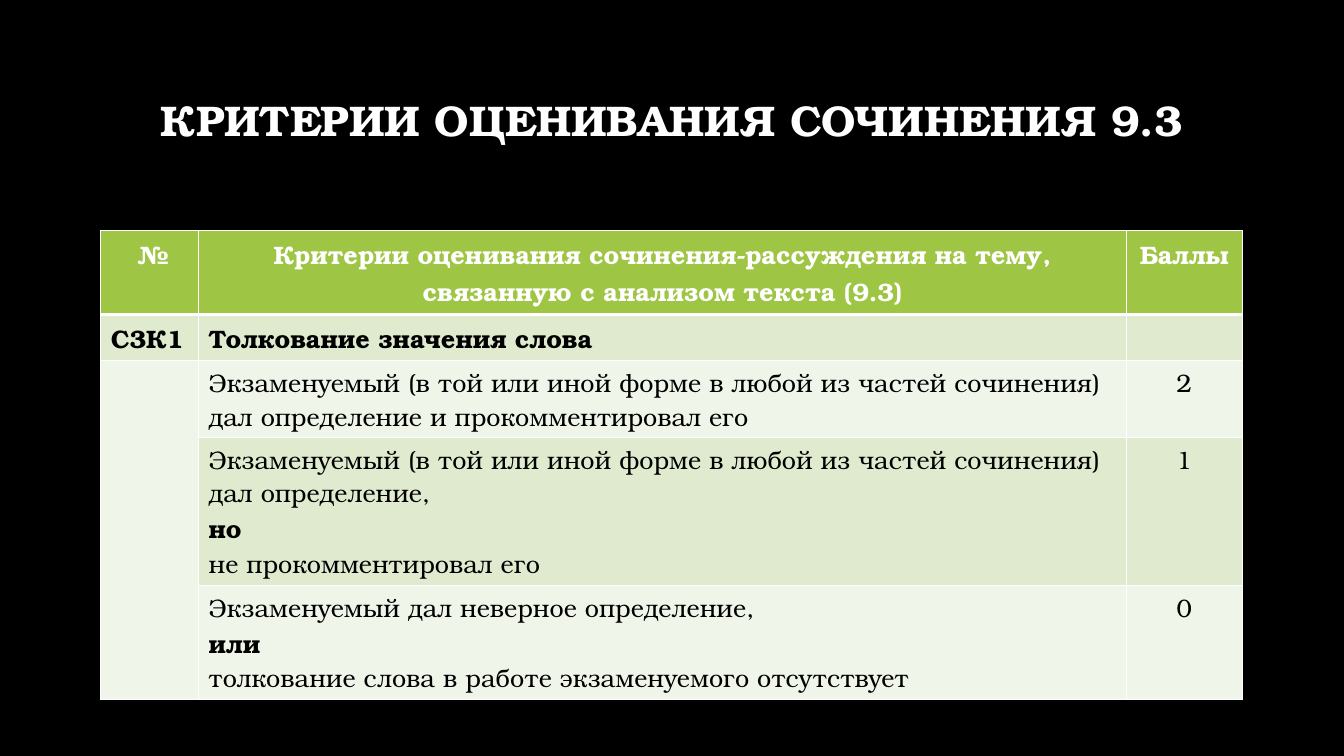
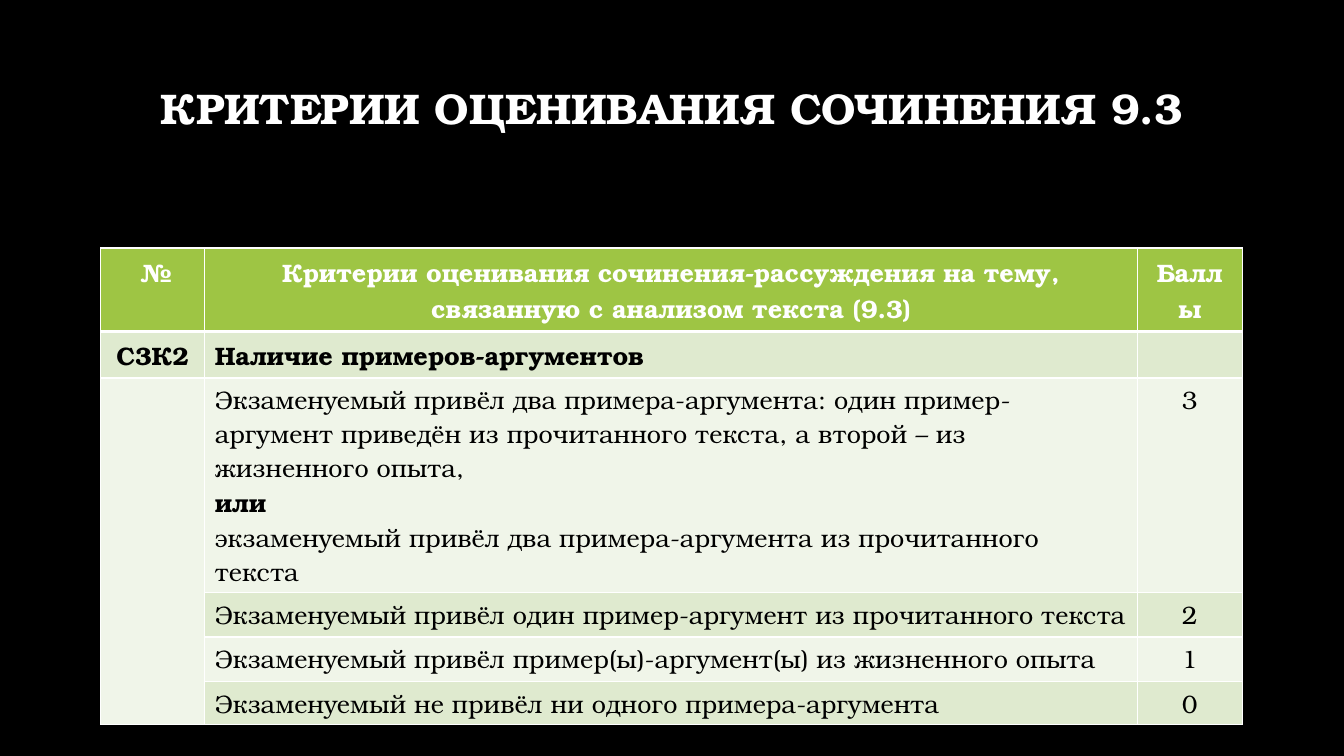
from lxml import etree
from pptx import Presentation
from pptx.dml.color import RGBColor
from pptx.enum.text import MSO_ANCHOR, PP_ALIGN
from pptx.oxml.ns import qn
from pptx.util import Inches, Pt

LEFT, CENTER = PP_ALIGN.LEFT, PP_ALIGN.CENTER
MIDDLE = MSO_ANCHOR.MIDDLE

COLORS = {
    "back": "000000",
    "light": "FFFFFF",
    "dark": "000000",
    "head": "9EC544",
    "odd": "DFEACF",
    "even": "F0F5E9",
}
FONT = "TeX Gyre Bonum"
TITLE = "КРИТЕРИИ ОЦЕНИВАНИЯ СОЧИНЕНИЯ 9.3"
HEADS = (
    " №",
    "Критерии оценивания сочинения-рассуждения на тему, "
    "связанную с анализом текста (9.3)",
    "Баллы",
)
JOINS = ("но", "или")  # linking words set in bold
X, WIDTH = 1, 11.32


def color(name):
    return RGBColor.from_string(COLORS[name])


class Deck:
    def __init__(self):
        self.prs = Presentation()
        self.prs.slide_width = Inches(13.33)
        self.prs.slide_height = Inches(7.5)
        self.slide = None

    def page(self):
        self.slide = self.prs.slides.add_slide(self.prs.slide_layouts[6])
        fill = self.slide.background.fill
        fill.solid()
        fill.fore_color.rgb = color("back")

    def style(self, para, size, ink, bold, align):
        para.alignment = align
        font = para.font
        font.name, font.size, font.bold = FONT, Pt(size), bold
        font.color.rgb = color(ink)

    def title(self, height):
        box = self.slide.shapes.add_textbox(
            Inches(X), Inches(0.67), Inches(WIDTH), Inches(height))
        frame = box.text_frame
        frame.word_wrap = True
        frame.vertical_anchor = MIDDLE
        para = frame.paragraphs[0]
        para.text = TITLE
        para.line_spacing = 0.9
        self.style(para, 30.6, "light", True, CENTER)

    def border(self, cell, top, bottom):
        props = cell._tc.get_or_add_tcPr()
        sides = (("L", 1), ("R", 1), ("T", top), ("B", bottom))
        for i, (side, width) in enumerate(sides):
            line = etree.Element(qn("a:ln" + side), w=str(Pt(width)))
            fill = etree.SubElement(line, qn("a:solidFill"))
            etree.SubElement(fill, qn("a:srgbClr"), val=COLORS["light"])
            props.insert(i, line)

    def cell(self, cell, text, row, align, bold):
        cell.fill.solid()
        shade = "head" if row == 0 else "odd" if row % 2 else "even"
        cell.fill.fore_color.rgb = color(shade)
        self.border(cell, 3 if row == 1 else 1, 3 if row == 0 else 1)
        cell.text = text
        ink = "dark" if row else "light"
        for para in cell.text_frame.paragraphs:
            self.style(para, 18, ink, bold or para.text in JOINS, align)

    def table(self, top, cols, heights, rows, code):
        """Head row, criterion row, then one row for each score."""
        rows = [HEADS] + rows
        table = self.slide.shapes.add_table(
            len(rows), len(cols), Inches(X), Inches(top),
            Inches(WIDTH), Inches(sum(heights))).table
        for col, width in zip(table.columns, cols):
            col.width = Inches(width)
        for r, (row, height) in enumerate(zip(rows, heights)):
            table.rows[r].height = Inches(height)
            aligns = (code, LEFT, CENTER) if r else (CENTER,) * 3
            for c, text in enumerate(row):
                self.cell(table.cell(r, c), text, r, aligns[c], r < 2)
        table.cell(2, 0).merge(table.cell(len(rows) - 1, 0))


def main():
    deck = Deck()

    # Meaning of the word
    deck.page()
    deck.title(1.09)
    deck.table(2.29, (0.97, 9.2, 1.15), (0.83, 0.46, 0.76, 1.47, 1.13), [
        ("С3К1", "Толкование значения слова", ""),
        ("", "Экзаменуемый (в той или иной форме в любой из частей сочинения) "
             "дал определение и прокомментировал его", "2"),
        ("", "Экзаменуемый (в той или иной форме в любой из частей сочинения) "
             "дал определение,\nно\nне прокомментировал его", "1"),
        ("", "Экзаменуемый дал неверное определение,\nили\n"
             "толкование слова в работе экзаменуемого отсутствует", "0"),
    ], LEFT)

    # Examples as arguments
    deck.page()
    deck.title(0.85)
    deck.table(2.46, (1.03, 9.25, 1.04), (0.83, 0.46, 2.13, 0.44, 0.44, 0.43), [
        ("С3К2", "Наличие примеров-аргументов", ""),
        ("", "Экзаменуемый привёл два примера-аргумента: один пример-аргумент "
             "приведён из прочитанного текста, а второй – из жизненного опыта,"
             "\nили\nэкзаменуемый привёл два примера-аргумента "
             "из прочитанного текста", "3"),
        ("", "Экзаменуемый привёл один пример-аргумент "
             "из прочитанного текста", "2"),
        ("", "Экзаменуемый привёл пример(ы)-аргумент(ы) "
             "из жизненного опыта", "1"),
        ("", "Экзаменуемый не привёл ни одного примера-аргумента", "0"),
    ], CENTER)

    deck.prs.save("out.pptx")


if __name__ == "__main__":
    main()
